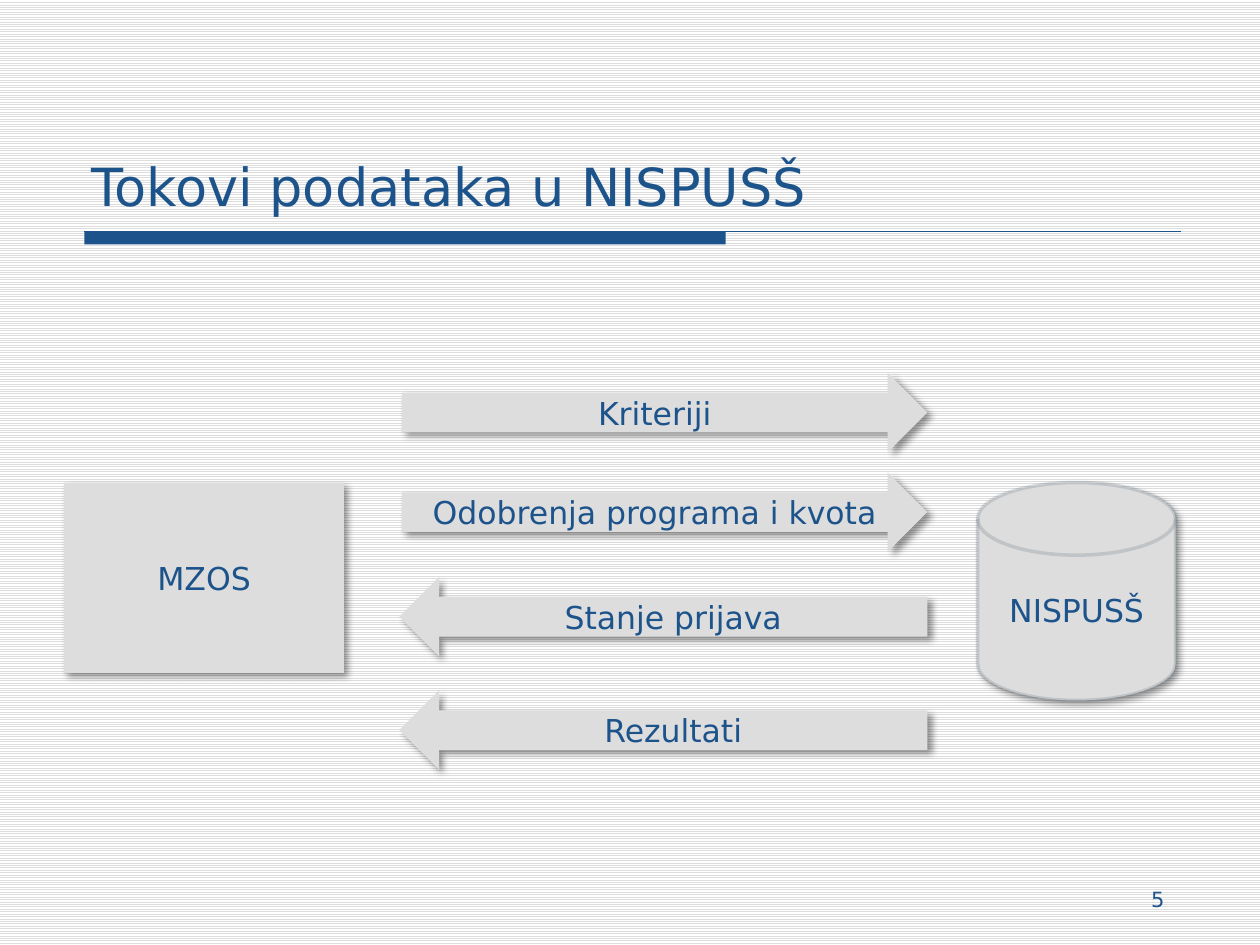
from lxml.etree import SubElement
from pptx import Presentation
from pptx.dml.color import RGBColor
from pptx.enum.dml import MSO_PATTERN
from pptx.enum.shapes import MSO_CONNECTOR, MSO_SHAPE
from pptx.enum.text import MSO_ANCHOR, PP_ALIGN
from pptx.oxml import parse_xml
from pptx.oxml.ns import nsdecls, qn
from pptx.util import Inches, Pt

COLORS = {"ink": "1D538B", "panel": "DDDDDD", "paper": "FFFFFF", "rim": "79848F", "shade": "000000"}
FONT = "DejaVu Sans"
COLUMNS, ROWS = 100, 75
CELL = Inches(0.1)
RIM_OPACITY = 27
FLOW_RIGHT, FLOW_HEIGHT = 73.6, 6.3
FLOWS = [
    ("Kriteriji", 29.6, True),
    ("Odobrenja programa i kvota", 37.5, True),
    ("Stanje prijava", 45.8, False),
    ("Rezultati", 54.8, False),
]


def color(key):
    """Return the named colour."""
    return RGBColor.from_string(COLORS[key])


def cells(*counts):
    """Turn counts of grid cells into lengths."""
    return [round(count * CELL) for count in counts]


def write(holder, words, size, align, anchor):
    """Write one run of text into a shape or text box."""
    frame = holder.text_frame
    frame.word_wrap = True
    frame.vertical_anchor = anchor
    paragraph = frame.paragraphs[0]
    paragraph.alignment = align
    run = paragraph.add_run()
    run.text = words
    run.font.size = Pt(size)
    run.font.name = FONT
    run.font.color.rgb = color("ink")


def add_label(slide, area, words, size, align=PP_ALIGN.LEFT, anchor=MSO_ANCHOR.TOP):
    """Add a free-standing text."""
    write(slide.shapes.add_textbox(*cells(*area)), words, size, align, anchor)


def add_solid(slide, preset, area, fill):
    """Add an outline-free filled shape without shadow."""
    solid = slide.shapes.add_shape(preset, *cells(*area))
    solid.shadow.inherit = False
    solid.fill.solid()
    solid.fill.fore_color.rgb = color(fill)
    solid.line.fill.background()
    return solid


def cast_shadow(solid):
    """Give a shape a soft shadow to the lower right."""
    effects = solid._element.spPr.find(qn("a:effectLst"))
    effects.append(parse_xml(
        f'<a:outerShdw {nsdecls("a")} blurRad="{Pt(4)}" dist="{Pt(3)}" dir="2700000" '
        f'algn="tl" rotWithShape="0"><a:srgbClr val="{COLORS["shade"]}">'
        '<a:alpha val="40000"/></a:srgbClr></a:outerShdw>'))


def add_node(slide, preset, area, words):
    """Add a shaded shape with centred text."""
    node = add_solid(slide, preset, area, "panel")
    cast_shadow(node)
    write(node, words, 18, PP_ALIGN.CENTER, MSO_ANCHOR.MIDDLE)
    return node


def add_store(slide, area, words):
    """Add a data store with a translucent rim."""
    store = add_node(slide, MSO_SHAPE.FLOWCHART_MAGNETIC_DISK, area, words)
    store.line.color.rgb = color("rim")
    store.line.width = Pt(2)
    rim = store.line._ln.find(".//" + qn("a:srgbClr"))
    SubElement(rim, qn("a:alpha"), val=str(RIM_OPACITY * 1000))


def add_flow(slide, words, top, to_store):
    """Add an arrow to the store or back from it."""
    left = 31.9 if to_store else 31.7
    area = (left, top, FLOW_RIGHT - left, FLOW_HEIGHT)
    flow = add_node(slide, MSO_SHAPE.RIGHT_ARROW, area, words)
    if not to_store:
        flow._element.spPr.get_or_add_xfrm().set("flipH", "1")


def add_title_rule(slide, left, top, right):
    """Add the thick bar and thin line below the title."""
    add_solid(slide, MSO_SHAPE.RECTANGLE, (left, top, 50.9, 1), "ink")
    rule = slide.shapes.add_connector(MSO_CONNECTOR.STRAIGHT, *cells(left, top, right, top))
    rule.line.color.rgb = color("ink")
    rule.line.width = Pt(0.75)
    SubElement(rule._element.spPr, qn("a:effectLst"))


def paint_background(slide):
    """Fill the background with light horizontal stripes."""
    fill = slide.background.fill
    fill.patterned()
    fill.pattern = MSO_PATTERN.LIGHT_HORIZONTAL
    fill.fore_color.rgb = color("panel")
    fill.back_color.rgb = color("paper")


def main():
    """Build the data flow slide."""
    deck = Presentation()
    deck.slide_width, deck.slide_height = cells(COLUMNS, ROWS)
    slide = deck.slides.add_slide(deck.slide_layouts[6])
    paint_background(slide)
    add_title_rule(slide, 6.7, 18.4, 93.7)
    add_label(slide, (6.3, 12.3, 87.5, 5.4), "Tokovi podataka u NISPUSŠ", 30, anchor=MSO_ANCHOR.BOTTOM)
    add_label(slide, (71.7, 69.9, 21.7, 3.9), "5", 12, align=PP_ALIGN.RIGHT)
    add_node(slide, MSO_SHAPE.RECTANGLE, (5.1, 38.3, 22.2, 15.1), "MZOS")
    add_store(slide, (77.6, 38.3, 15.7, 17.3), "NISPUSŠ")
    for words, top, to_store in FLOWS:
        add_flow(slide, words, top, to_store)
    deck.save("out.pptx")


if __name__ == "__main__":
    main()
